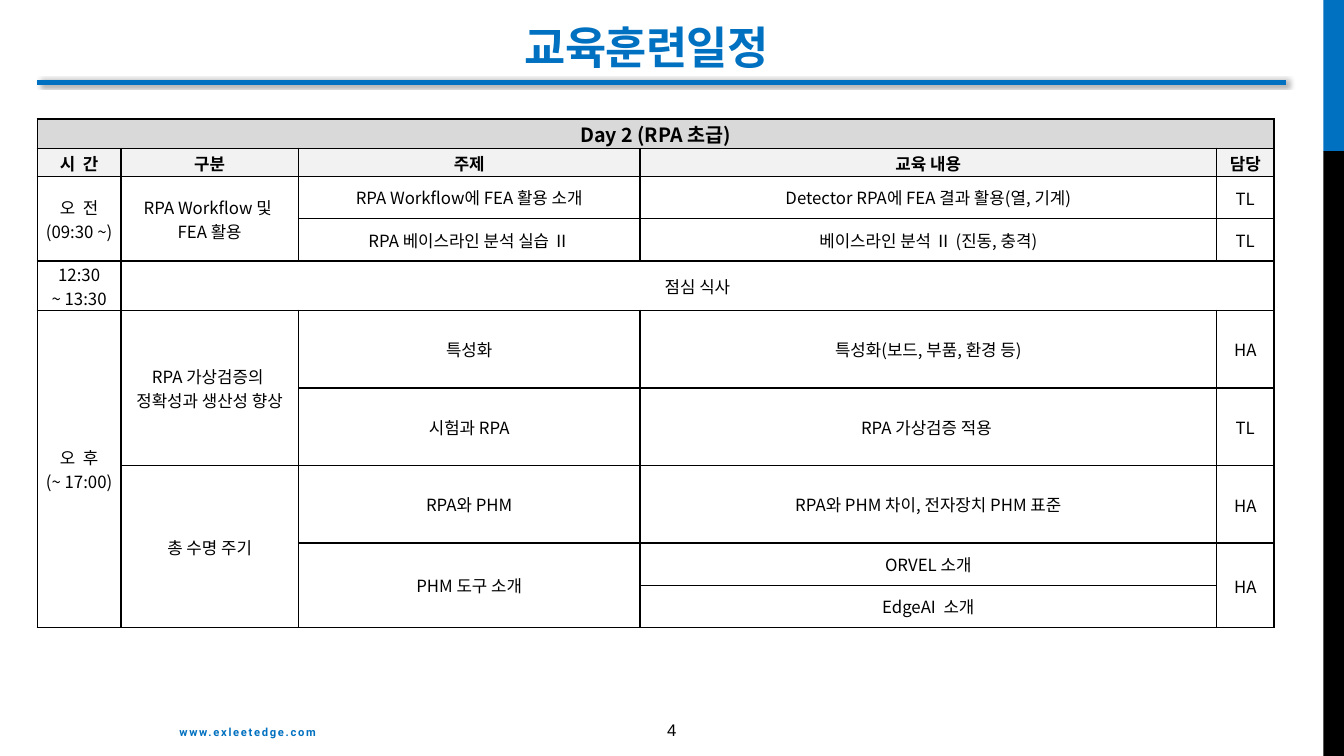
"""Build the training schedule slide for day 2."""
from lxml.etree import SubElement
from pptx import Presentation
from pptx.dml.color import RGBColor
from pptx.enum.shapes import MSO_CONNECTOR, MSO_SHAPE
from pptx.enum.text import MSO_ANCHOR, PP_ALIGN
from pptx.oxml.ns import qn
from pptx.util import Inches, Pt

BLUE, BLACK = "0070C0", "000000"
TABLE_FONT = "Noto Sans CJK KR"
COLUMN_WIDTHS = [0.83, 1.76, 3.39, 5.72, 0.57]
ROW_HEIGHTS = [0.29, 0.28, 0.42, 0.42, 0.49, 0.77, 0.77, 0.77, 0.42, 0.42]
ROW_FILLS = {0: "D9D9D9", 1: "F2F2F2"}
SCHEDULE = [
    ["Day 2 (RPA 초급)", None, None, None, None],
    ["시  간", "구분", "주제", "교육 내용", "담당"],
    ["오  전\n(09:30 ~)", "RPA Workflow 및 \nFEA 활용",
     "RPA Workflow에 FEA 활용 소개", "Detector RPA에 FEA 결과 활용(열, 기계)", "TL"],
    [None, None, "RPA 베이스라인 분석 실습 Ⅱ", "베이스라인 분석 Ⅱ (진동, 충격)", "TL"],
    ["12:30\n~ 13:30", "점심 식사", None, None, None],
    ["오  후\n(~ 17:00)", "RPA 가상검증의 \n정확성과 생산성 향상",
     "특성화", "특성화(보드, 부품, 환경 등)", "HA"],
    [None, None, "시험과 RPA", "RPA 가상검증 적용 ", "TL"],
    [None, "총 수명 주기", "RPA와 PHM", "RPA와 PHM 차이, 전자장치 PHM 표준", "HA"],
    [None, None, "PHM 도구 소개", "ORVEL 소개", "HA"],
    [None, None, None, "EdgeAI  소개", None],
]
MERGES = [
    ((0, 0), (0, 4)), ((2, 0), (3, 0)), ((2, 1), (3, 1)), ((4, 1), (4, 4)),
    ((5, 0), (9, 0)), ((5, 1), (6, 1)), ((7, 1), (9, 1)), ((8, 2), (9, 2)),
    ((8, 4), (9, 4)),
]
SIDE_BARS = [(0, 1.5, BLUE), (1.5, 6, BLACK)]
TEXTS = [
    ("교육훈련일정", (0.37, 0.17, 12.09, 0.58), (0.11, 0.06), MSO_ANCHOR.MIDDLE,
     PP_ALIGN.CENTER, ("Arial", 32, BLUE, True, -0.6)),
    ("www.exleetedge.com", (1.67, 7.14, 2.42, 0.4), (0.11, 0.06), MSO_ANCHOR.TOP,
     PP_ALIGN.LEFT, ("Roboto", 8, BLUE, True, 1.2)),
    ("4", (6.24, 7.09, 0.85, 0.34), (0.1, 0.05), MSO_ANCHOR.TOP,
     PP_ALIGN.CENTER, ("Arial", 12, BLACK, False, 0)),
]


def color(value):
    return RGBColor.from_string(value)


def style_paragraph(paragraph, alignment, name, size, fill, bold, spacing=0):
    paragraph.alignment = alignment
    font = paragraph.font
    font.name, font.size, font.bold = name, Pt(size), bold
    font.color.rgb = color(fill)
    properties = paragraph._p.pPr.find(qn("a:defRPr"))
    SubElement(properties, qn("a:ea"), typeface=name)
    if spacing:
        properties.set("spc", str(round(spacing * 100)))


def add_text(slide, text, box, insets, anchor, alignment, style):
    frame = slide.shapes.add_textbox(*map(Inches, box)).text_frame
    frame.word_wrap = True
    frame.vertical_anchor = anchor
    frame.margin_left = frame.margin_right = Inches(insets[0])
    frame.margin_top = frame.margin_bottom = Inches(insets[1])
    frame.text = text
    style_paragraph(frame.paragraphs[0], alignment, *style)


def add_side_bar(slide, top, height, fill):
    bar = slide.shapes.add_shape(
        MSO_SHAPE.RECTANGLE, *map(Inches, (13.13, top, 0.21, height)))
    bar.shadow.inherit = False
    bar.fill.solid()
    bar.fill.fore_color.rgb = color(fill)
    bar.line.fill.background()


def add_title_rule(slide):
    rule = slide.shapes.add_connector(
        MSO_CONNECTOR.STRAIGHT, *map(Inches, (0.37, 0.82, 12.76, 0.82)))
    rule.line.color.rgb = color(BLUE)
    rule.line.width = Pt(3.25)
    effects = SubElement(rule._element.spPr, qn("a:effectLst"))
    shadow = SubElement(effects, qn("a:outerShdw"), blurRad=str(Pt(3.1)),
                        dist=str(Pt(1.8)), dir="0", algn="l", rotWithShape="0")
    shade = SubElement(shadow, qn("a:srgbClr"), val=BLACK)
    SubElement(shade, qn("a:alpha"), val="40000")


def add_borders(cell):
    properties = cell._tc.get_or_add_tcPr()
    for side in ("lnL", "lnR", "lnT", "lnB"):
        line = SubElement(properties, qn(f"a:{side}"), w=str(Pt(1)))
        fill = SubElement(line, qn("a:solidFill"))
        SubElement(fill, qn("a:srgbClr"), val=BLACK)


def cell_margins(row, column):
    if row < 2 or column not in (2, 3):
        return 0.01, 0.01, 0
    return (0.2, 0.12, 0.12) if row == 5 else (0.15, 0.09, 0.09)


def fill_cell(cell, row, column, text):
    add_borders(cell)
    if row in ROW_FILLS:
        cell.fill.solid()
        cell.fill.fore_color.rgb = color(ROW_FILLS[row])
    else:
        cell.fill.background()
    side, top, bottom = map(Inches, cell_margins(row, column))
    cell.margin_left = cell.margin_right = side
    cell.margin_top, cell.margin_bottom = top, bottom
    cell.vertical_anchor = MSO_ANCHOR.MIDDLE
    cell.text = text or ""
    for paragraph in cell.text_frame.paragraphs:
        style_paragraph(paragraph, PP_ALIGN.CENTER, TABLE_FONT,
                        14 if row == 0 else 12, BLACK, row < 2)


def add_schedule(slide):
    table = slide.shapes.add_table(
        len(ROW_HEIGHTS), len(COLUMN_WIDTHS), Inches(0.37), Inches(1.18),
        Inches(sum(COLUMN_WIDTHS)), Inches(sum(ROW_HEIGHTS))).table
    table.first_row = table.horz_banding = False
    for column, width in zip(table.columns, COLUMN_WIDTHS):
        column.width = Inches(width)
    for row, height in zip(table.rows, ROW_HEIGHTS):
        row.height = Inches(height)
    for row, texts in enumerate(SCHEDULE):
        for column, text in enumerate(texts):
            fill_cell(table.cell(row, column), row, column, text)
    for first, last in MERGES:
        table.cell(*first).merge(table.cell(*last))


def main():
    presentation = Presentation()
    presentation.slide_width = Inches(40 / 3)
    presentation.slide_height = Inches(7.5)
    slide = presentation.slides.add_slide(presentation.slide_layouts[6])
    for bar in SIDE_BARS:
        add_side_bar(slide, *bar)
    add_title_rule(slide)
    for item in TEXTS:
        add_text(slide, *item)
    add_schedule(slide)
    presentation.save("out.pptx")


if __name__ == "__main__":
    main()
